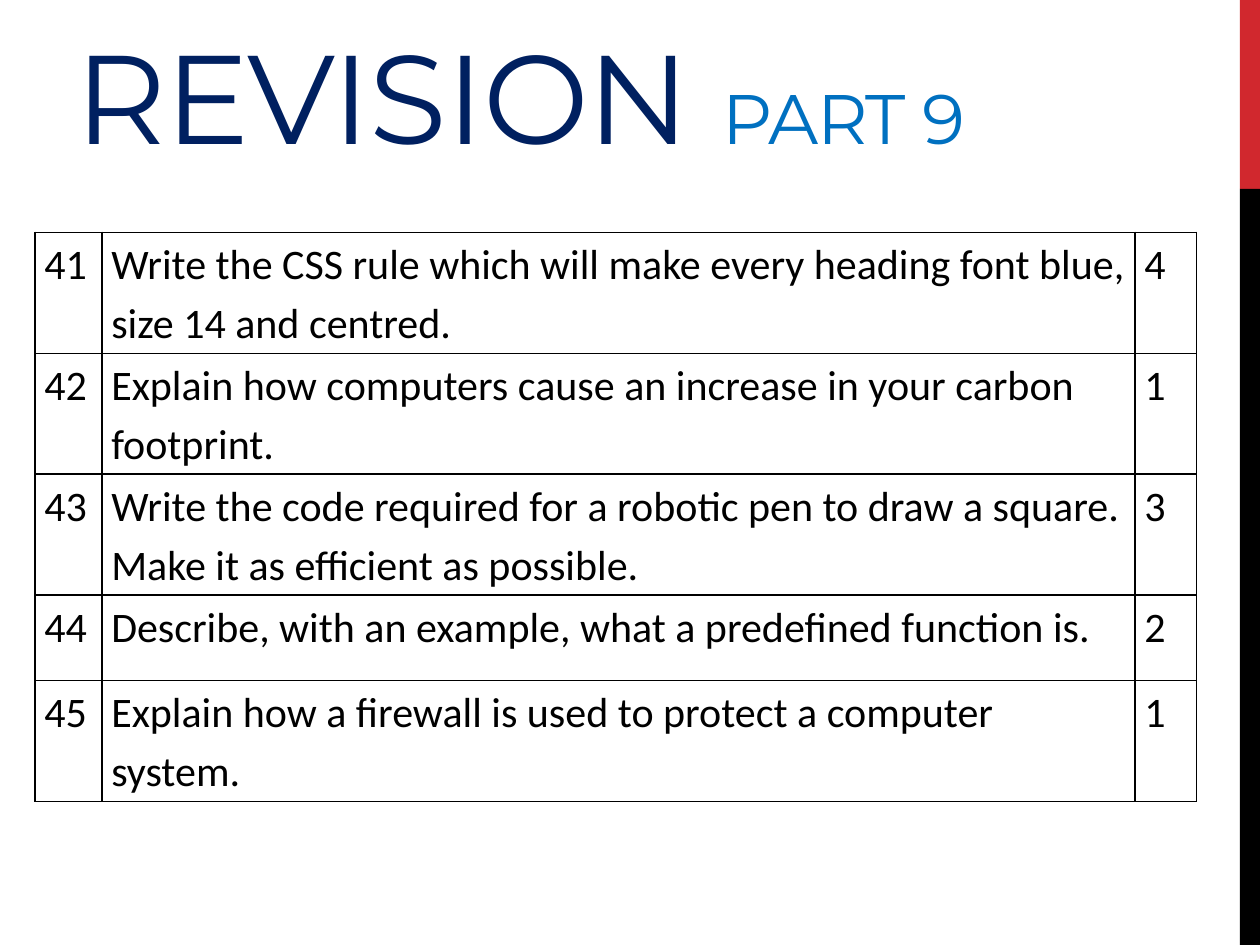
from lxml.etree import SubElement
from pptx import Presentation
from pptx.dml.color import RGBColor as RGB
from pptx.enum.shapes import MSO_SHAPE as SHAPE
from pptx.enum.text import MSO_ANCHOR as ANCHOR
from pptx.oxml.ns import qn
from pptx.util import Pt

COLORS = {"red": "D1282E", "black": "000000", "navy": "002060", "blue": "0070C0"}
QUESTIONS = [
    ("41", "Write the CSS rule which will make every heading font blue, size 14 and centred.", "4"),
    ("42", "Explain how computers cause an increase in your carbon footprint.", "1"),
    ("43", "Write the code required for a robotic pen to draw a square. Make it as efficient as possible.", "3"),
    ("44", "Describe, with an example, what a predefined function is.", "2"),
    ("45", "Explain how a firewall is used to protect a computer system.", "1"),
]
COLUMN_WIDTHS = [38.2, 590.4, 35.1]
ROW_HEIGHTS = [69.1, 69.1, 69.1, 48.8, 69.1]
CELL_FORMAT = {"margin_left": Pt(5.4), "margin_right": Pt(5), "margin_top": 0,
               "margin_bottom": 0, "vertical_anchor": ANCHOR.TOP}
HEADING_FORMAT = {"margin_top": 0, "margin_bottom": 0, "word_wrap": True,
                  "vertical_anchor": ANCHOR.BOTTOM}


def add_run(paragraph, text, font, size, color):
    run = paragraph.add_run()
    run.text = text
    run.font.name = font
    run.font.size = Pt(size)
    run.font.color.rgb = RGB.from_string(COLORS[color])
    return run


def add_borders(cell):
    properties = cell._tc.get_or_add_tcPr()
    for position, side in enumerate(("lnL", "lnR", "lnT", "lnB")):
        line = properties.makeelement(qn(f"a:{side}"), {"w": str(Pt(1))})
        fill = SubElement(line, qn("a:solidFill"))
        SubElement(fill, qn("a:srgbClr"), val=COLORS["black"])
        properties.insert(position, line)


prs = Presentation()
prs.slide_width, prs.slide_height = Pt(720), Pt(540)
slide = prs.slides.add_slide(prs.slide_layouts[6])

# Side stripe
for top, height, color in [(0, 108, "red"), (108, 432, "black")]:
    stripe = slide.shapes.add_shape(SHAPE.RECTANGLE, Pt(708.5), Pt(top), Pt(11.5), Pt(height))
    stripe.shadow.inherit = False
    stripe.fill.solid()
    stripe.fill.fore_color.rgb = RGB.from_string(COLORS[color])
    stripe.line.fill.background()

# Heading
heading = slide.shapes.add_textbox(Pt(36), Pt(3.6), Pt(618.5), Pt(93.6)).text_frame
for name, value in HEADING_FORMAT.items():
    setattr(heading, name, value)
for text, size, color in [("REVISION ", 72, "navy"), ("PART 9", 40, "blue")]:
    run = add_run(heading.paragraphs[0], text, "Montserrat", size, color)
    run.font._element.set("spc", "-60")

# Questions with their marks
questions = slide.shapes.add_table(
    len(QUESTIONS), len(COLUMN_WIDTHS), Pt(20), Pt(132.8),
    Pt(sum(COLUMN_WIDTHS)), Pt(sum(ROW_HEIGHTS))).table
questions.first_row = questions.horz_banding = False
for column, width in zip(questions.columns, COLUMN_WIDTHS):
    column.width = Pt(width)
for row, height, entries in zip(questions.rows, ROW_HEIGHTS, QUESTIONS):
    row.height = Pt(height)
    for cell, entry in zip(row.cells, entries):
        for name, value in CELL_FORMAT.items():
            setattr(cell, name, value)
        cell.fill.background()
        add_borders(cell)
        paragraph = cell.text_frame.paragraphs[0]
        paragraph.line_spacing = 1.15
        add_run(paragraph, entry, "Calibri", 24, "black")

prs.save("out.pptx")
